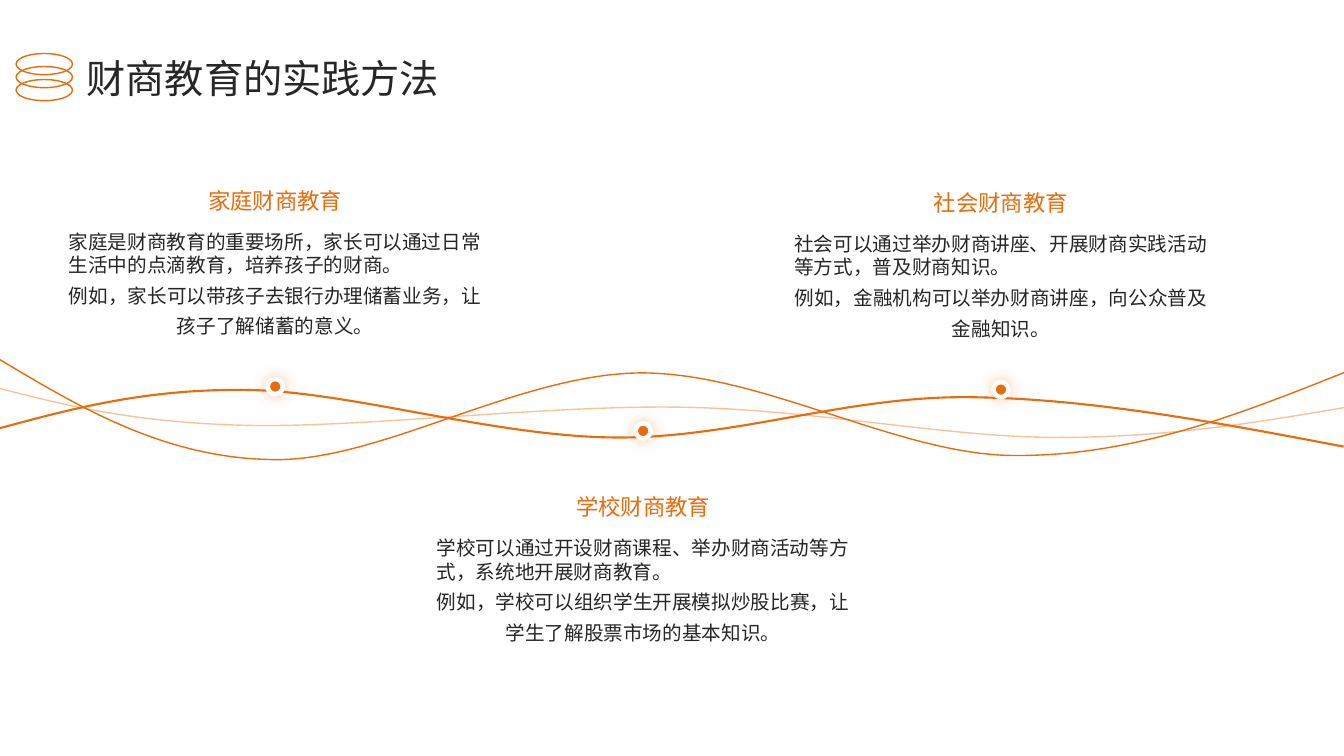
from dataclasses import dataclass

from lxml.etree import SubElement
from pptx import Presentation
from pptx.dml.color import RGBColor
from pptx.enum.shapes import MSO_SHAPE as Shape
from pptx.enum.text import MSO_ANCHOR as Anchor, MSO_AUTO_SIZE as AutoSize, PP_ALIGN as Align
from pptx.oxml.ns import qn
from pptx.util import Pt

TITLE = "财商教育的实践方法"

# heading, statement, example, left, heading top, dot top
METHODS = [
    ("家庭财商教育",
     "家庭是财商教育的重要场所，家长可以通过日常生活中的点滴教育，培养孩子的财商。",
     "例如，家长可以带孩子去银行办理储蓄业务，让孩子了解储蓄的意义。",
     49, 101.5, 270.7),
    ("学校财商教育",
     "学校可以通过开设财商课程、举办财商活动等方式，系统地开展财商教育。",
     "例如，学校可以组织学生开展模拟炒股比赛，让学生了解股票市场的基本知识。",
     311.8, 320.4, 302.4),
    ("社会财商教育",
     "社会可以通过举办财商讲座、开展财商实践活动等方式，普及财商知识。",
     "例如，金融机构可以举办财商讲座，向公众普及金融知识。",
     567.4, 103, 272.9),
]

# line width, opacity in percent, start point followed by Bezier triples
WAVES = [
    (1.5, 100, [(-0.7, 306), (52.6, 291.6), (105.8, 277.2), (179.3, 278.6),
                (252, 280.1), (353.5, 311.8), (439.2, 312.5),
                (524.2, 313.2), (604.1, 283), (691.2, 283.7),
                (777.6, 284.4), (869, 301.7), (959.8, 319)]),
    (1, 40, [(-4.3, 276.5), (43.9, 288.7), (92.2, 301.7), (174.2, 303.8),
             (255.6, 306), (388.1, 289.4), (485.3, 290.9),
             (581.8, 292.3), (675.4, 312.5), (755.3, 312.5),
             (834.5, 312.5), (898.6, 301.7), (961.9, 290.9)]),
    (1, 100, [(-2.2, 255.6), (57.6, 291.6), (117.4, 326.9), (193.7, 328.3),
              (270.7, 330.5), (369.4, 267.1), (457.9, 266.4),
              (546.5, 266.4), (643, 326.2), (727.2, 325.4),
              (810.7, 325.4), (885.6, 295.9), (961.2, 265.7)]),
]

COLUMN_WIDTH = 295.2
HEADING_HEIGHT = 54.7
BODY_OFFSET, BODY_HEIGHT = 62.6, 97.2
DOT = 10.8
RING_LEFT, RING_TOP, RING_STEP = 11.5, 38.2, 9.3
RING_WIDTH, RING_HEIGHT = 40.3, 15.1


@dataclass(frozen=True)
class Theme:
    font: str = "Noto Sans CJK SC"
    accent: RGBColor = RGBColor(0xEB, 0x6B, 0x0B)
    glow: str = "F4791C"
    ink: RGBColor = RGBColor(0x26, 0x26, 0x26)
    white: RGBColor = RGBColor(0xFF, 0xFF, 0xFF)
    title: float = 28
    heading: float = 16
    body: float = 14


THEME = Theme()


def style(para, size, color, align, spacing=1.0):
    para.alignment = align
    para.line_spacing = spacing
    para.space_before = para.space_after = Pt(0)
    for span in para.runs:
        font = span.font
        font.name, font.size, font.color.rgb = THEME.font, Pt(size), color
        east_asian = SubElement(font._element, qn("a:ea"))
        east_asian.set("typeface", THEME.font)


def set_frame(frame, anchor, margin=None):
    frame.word_wrap = True
    frame.auto_size = AutoSize.NONE
    frame.vertical_anchor = anchor
    if margin is not None:
        frame.margin_left = frame.margin_right = Pt(margin)
        frame.margin_top = frame.margin_bottom = Pt(margin)


def add_text_box(slide, left, top, height):
    return slide.shapes.add_textbox(
        Pt(left), Pt(top), Pt(COLUMN_WIDTH), Pt(height)).text_frame


def add_title(slide):
    title = slide.shapes.title
    title.left, title.top, title.width, title.height = Pt(61.9), Pt(35.3), Pt(840.2), Pt(36.7)
    frame = title.text_frame
    frame.text = TITLE
    set_frame(frame, Anchor.MIDDLE, 0)
    style(frame.paragraphs[0], THEME.title, THEME.ink, Align.LEFT, 1.1)


def add_ellipse(slide, left, top, width, height, line_color, line_width):
    ellipse = slide.shapes.add_shape(Shape.OVAL, Pt(left), Pt(top), Pt(width), Pt(height))
    ellipse.shadow.inherit = False
    ellipse.fill.background()
    ellipse.line.color.rgb = line_color
    ellipse.line.width = Pt(line_width)
    return ellipse


def add_wave(slide, width, opacity, points):
    """Draw a chain of cubic curves by grouping straight segments in threes."""
    start, *rest = [(Pt(x), Pt(y)) for x, y in points]
    builder = slide.shapes.build_freeform(*start)
    builder.add_line_segments(rest, close=False)
    wave = builder.convert_to_shape()
    segments = list(wave._element.iter(qn("a:lnTo")))
    outline = segments[0].getparent()
    for first in range(0, len(segments), 3):
        curve = SubElement(outline, qn("a:cubicBezTo"))
        for segment in segments[first:first + 3]:
            curve.append(segment[0])
            outline.remove(segment)
    wave.shadow.inherit = False
    wave.fill.background()
    wave.line.color.rgb = THEME.accent
    wave.line.width = Pt(width)
    if opacity < 100:
        color = wave.line._ln.find(".//" + qn("a:srgbClr"))
        SubElement(color, qn("a:alpha")).set("val", str(opacity * 1000))


def add_dot(slide, left, top):
    dot = add_ellipse(slide, left, top, DOT, DOT, THEME.white, 3.25)
    dot.fill.solid()
    dot.fill.fore_color.rgb = THEME.accent
    effects = dot._element.spPr.find(qn("a:effectLst"))
    shadow = SubElement(effects, qn("a:outerShdw"), blurRad=str(Pt(10)), dist="0",
                        dir="0", algn="ctr", rotWithShape="0")
    color = SubElement(shadow, qn("a:srgbClr"), val=THEME.glow)
    SubElement(color, qn("a:alpha"), val="40000")


def add_method(slide, heading, statement, example, left, top):
    body = add_text_box(slide, left, top + BODY_OFFSET, BODY_HEIGHT)
    set_frame(body, Anchor.TOP, 0)
    body.text = statement
    style(body.paragraphs[0], THEME.body, THEME.ink, Align.LEFT)
    para = body.add_paragraph()
    para.text = example
    style(para, THEME.body, THEME.ink, Align.CENTER, 1.3)

    head = add_text_box(slide, left, top, HEADING_HEIGHT)
    set_frame(head, Anchor.BOTTOM)
    head.text = heading
    style(head.paragraphs[0], THEME.heading, THEME.accent, Align.CENTER)


def main():
    deck = Presentation()
    deck.slide_width, deck.slide_height = Pt(960), Pt(540)
    slide = deck.slides.add_slide(deck.slide_layouts.get_by_name("Title Only"))
    add_title(slide)
    for wave in WAVES:
        add_wave(slide, *wave)
    for heading, statement, example, left, top, dot_top in METHODS:
        add_dot(slide, left + (COLUMN_WIDTH - DOT) / 2, dot_top)
        add_method(slide, heading, statement, example, left, top)
    for row in reversed(range(3)):
        add_ellipse(slide, RING_LEFT, RING_TOP + row * RING_STEP,
                    RING_WIDTH, RING_HEIGHT, THEME.accent, 1)
    deck.save("out.pptx")


if __name__ == "__main__":
    main()
